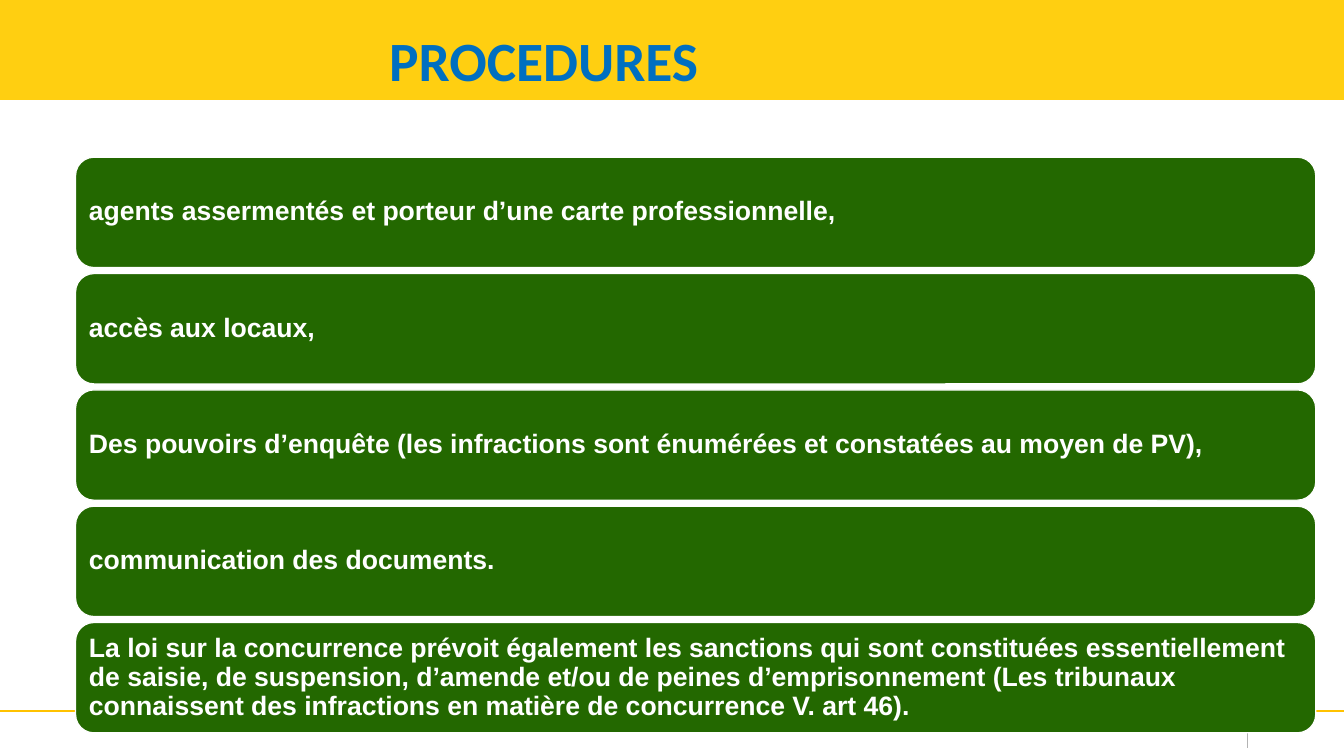
import pptx
import pptx.util
import pptx.dml.color
import pptx.enum.shapes
import pptx.enum.text
import pptx.oxml

Inches = pptx.util.Inches
Pt = pptx.util.Pt
Shape = pptx.enum.shapes.MSO_SHAPE
Anchor = pptx.enum.text.MSO_ANCHOR
Align = pptx.enum.text.PP_ALIGN

STEPS = [
    "agents assermentés et porteur d’une carte professionnelle,",
    "accès aux locaux,",
    "Des pouvoirs d’enquête (les infractions sont énumérées et constatées au moyen de PV),",
    "communication des documents.",
    "La loi sur la concurrence prévoit également les sanctions qui sont constituées "
    "essentiellement de saisie, de suspension, d’amende et/ou de peines d’emprisonnement "
    "(Les tribunaux connaissent des infractions en matière de concurrence V. art 46).",
]


def color(code):
    return pptx.dml.color.RGBColor.from_string(code)


def add_block(slide, kind, box, fill):
    shape = slide.shapes.add_shape(kind, *map(Inches, box))
    shape.shadow.inherit = False
    shape.fill.solid()
    shape.fill.fore_color.rgb = color(fill)
    shape.line.fill.background()
    return shape


def add_rule(slide, start, end, code, width):
    ends = map(Inches, (*start, *end))
    rule = slide.shapes.add_connector(pptx.enum.shapes.MSO_CONNECTOR.STRAIGHT, *ends)
    rule.line.color.rgb = color(code)
    rule.line.width = Pt(width)
    rule._element.spPr.append(pptx.oxml.parse_xml(
        '<a:effectLst xmlns:a="http://schemas.openxmlformats.org/drawingml/2006/main"/>'))


def write(frame, text, font, size, code, anchor, inset):
    """Fill a text frame with one bold, left-aligned run."""
    frame.word_wrap = True
    frame.auto_size = pptx.enum.text.MSO_AUTO_SIZE.NONE
    frame.vertical_anchor = anchor
    frame.margin_left = frame.margin_right = Inches(inset)
    frame.margin_top = frame.margin_bottom = Inches(inset)
    para = frame.paragraphs[0]
    para.alignment = Align.LEFT
    run = para.add_run()
    run.text = text
    run.font.name = font
    run.font.size = Pt(size)
    run.font.bold = True
    run.font.color.rgb = color(code)
    return para


def add_frame(slide, width):
    """Draw the top band and the footer rules."""
    add_block(slide, Shape.RECTANGLE, (0, 0, width, 0.99), "FFCF11")
    add_rule(slide, (0, 7.05), (width, 7.05), "FFC200", 1.5)
    add_rule(slide, (12.37, 7.16), (12.37, 7.42), "B3B3B3", 0.75)


def set_title(slide, text, box):
    title = slide.shapes.title
    title.left, title.top, title.width, title.height = map(Inches, box)
    write(title.text_frame, text, "Calibri", 39.6, "006FC0", Anchor.BOTTOM, 0)
    tree = slide.shapes._spTree
    tree.remove(title._element)
    tree.append(title._element)  # in front of the band


def add_steps(slide, steps, box, gap):
    """Stack equal cards that fill the box."""
    left, top, width, height = box
    tall = (height - gap * (len(steps) - 1)) / len(steps)
    for row, text in enumerate(steps):
        place = (left, top + row * (tall + gap), width, tall)
        card = add_block(slide, Shape.ROUNDED_RECTANGLE, place, "236800")
        card.line.color.rgb = color("FFFFFF")
        card.line.width = Pt(0.85)
        para = write(card.text_frame, text, "Arial", 19, "FFFFFF", Anchor.MIDDLE, 0.08)
        para.line_spacing = 0.9


def main():
    deck = pptx.Presentation()
    deck.slide_width = Inches(13.33)
    deck.slide_height = Inches(7.5)
    slide = deck.slides.add_slide(deck.slide_layouts[5])
    add_frame(slide, 13.33)
    set_title(slide, "PROCEDURES", (3.86, 0.31, 7.88, 0.61))
    add_steps(slide, STEPS, (0.75, 1.56, 12.3, 5.71), 0.06)
    deck.save("out.pptx")


if __name__ == "__main__":
    main()
